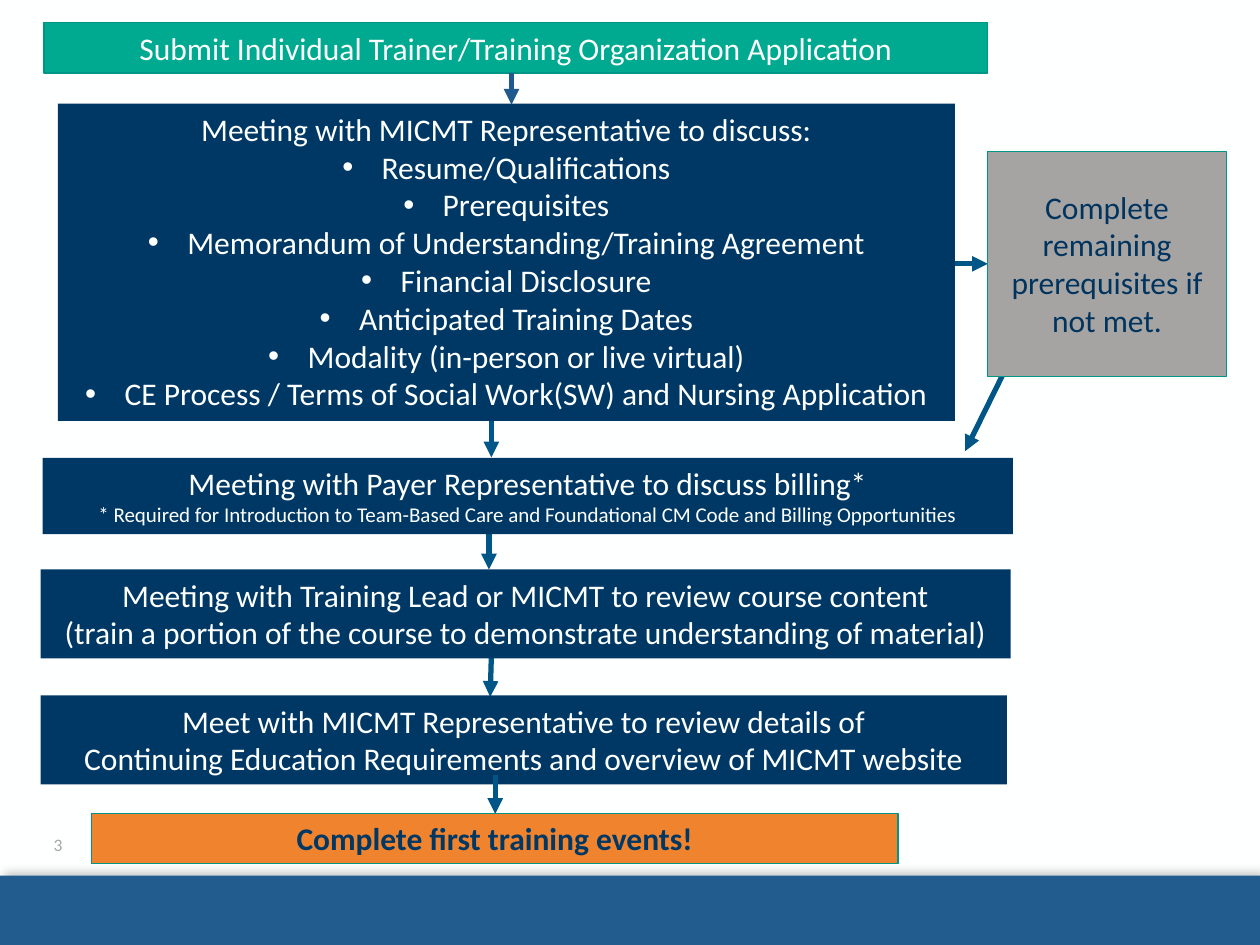
from lxml import etree
from pptx import Presentation
from pptx.dml.color import RGBColor
from pptx.enum.shapes import MSO_CONNECTOR, MSO_SHAPE
from pptx.enum.text import MSO_ANCHOR, PP_ALIGN
from pptx.oxml import parse_xml
from pptx.oxml.ns import nsdecls, qn
from pptx.util import Pt

RECT = MSO_SHAPE.RECTANGLE
STRAIGHT = MSO_CONNECTOR.STRAIGHT
TOP, MIDDLE = MSO_ANCHOR.TOP, MSO_ANCHOR.MIDDLE
CENTER = PP_ALIGN.CENTER
LEFT_SIDE = 1

THEME = {
    "font": "Calibri", "body": 18, "note": 12, "number": 10,
    "paper": "FEFFFF", "navy": "003865", "teal": "00AA90", "outline": "009687",
    "gray": "A6A4A3", "gray_text": "00345E", "orange": "F0842E",
    "footer": "225B8D", "number_text": "A7A7A7",
    "arrow": "005687", "first_arrow": "1F598D",
}

BOXES = {
    "apply": {"at": (25.2, 13, 539.3, 28.8), "fill": "teal", "outlined": True,
              "lines": ["Submit Individual Trainer/Training Organization Application"]},
    "discuss": {"at": (33.1, 59.2, 512.6, 181.3), "fill": "navy",
                "lines": ["Meeting with MICMT Representative to discuss:"],
                "bullets": ["Resume/Qualifications",
                            "Prerequisites",
                            "Memorandum of Understanding/Training Agreement",
                            "Financial Disclosure",
                            "Anticipated Training Dates",
                            "Modality (in-person or live virtual)",
                            "CE Process / Terms of Social Work(SW) and Nursing Application"]},
    "prerequisites": {"at": (564.5, 86.5, 136.3, 128.5), "fill": "gray", "outlined": True,
                      "color": "gray_text", "inset_top": 20.7,
                      "lines": ["Complete remaining prerequisites if not met."]},
    "billing": {"at": (24.4, 261.6, 554.4, 43.6), "fill": "navy",
                "lines": ["Meeting with Payer Representative to discuss billing*"],
                "notes": ["* Required for Introduction to Team-Based Care and "
                          "Foundational CM Code and Billing Opportunities"]},
    "content": {"at": (23.2, 325.4, 554.4, 50.9), "fill": "navy",
                "lines": ["Meeting with Training Lead or MICMT to review course content",
                          "(train a portion of the course to demonstrate understanding of material)"]},
    "complete": {"at": (52.2, 464.7, 461, 28.8), "fill": "orange", "outlined": True,
                 "color": "navy", "bold": True,
                 "lines": ["Complete first training events!"]},
    "details": {"at": (23.2, 397.4, 552.2, 50.9), "fill": "navy",
                "lines": ["Meet with MICMT Representative to review details of",
                          "Continuing Education Requirements and overview of MICMT website"]},
}

ARROWS_BEHIND = [
    (606.2, 146.9, 551.5, 257.8),
    (279.4, 272.9, 279.4, 325.4),
    (281.5, 350.6, 280.1, 398.2),
    (280.8, 209.5, 280.8, 261.4),
]
TO_PREREQUISITES = (511.2, 150.75, 564.5, 150.75)
ARROWS_FRONT = [
    ((283, 442.8, 283, 465.1), "arrow"),
    ((292.3, 41.8, 292.3, 59.8), "first_arrow"),
]


def rgb(name):
    return RGBColor.from_string(THEME[name])


def add_rect(slide, at, fill):
    sp = slide.shapes.add_shape(RECT, *map(Pt, at))
    sp.shadow.inherit = False
    sp.fill.solid()
    sp.fill.fore_color.rgb = rgb(fill)
    sp.line.fill.background()
    return sp


def add_arrow(slide, ends, color="arrow"):
    cx = slide.shapes.add_connector(STRAIGHT, *map(Pt, ends))
    cx.line.color.rgb = rgb(color)
    cx.line.width = Pt(3)
    etree.SubElement(cx.line._get_or_add_ln(), qn("a:tailEnd"), type="triangle")
    etree.SubElement(cx._element.spPr, qn("a:effectLst"))
    return cx


def set_bullet(p):
    pPr = p._p.get_or_add_pPr()
    pPr.set("marL", str(Pt(22.5)))
    pPr.set("indent", str(-Pt(22.5)))
    etree.SubElement(pPr, qn("a:buFont"), typeface="Arial")
    etree.SubElement(pPr, qn("a:buChar"), char="•")


def format_text(p, size, color, bold=False):
    p.alignment = CENTER
    for r in p.runs:
        r.font.name = THEME["font"]
        r.font.size = Pt(THEME[size])
        r.font.color.rgb = rgb(color)
        r.font.bold = bold


def add_box(slide, box):
    sp = add_rect(slide, box["at"], box["fill"])
    if box.get("outlined"):
        sp.line.color.rgb = rgb("outline")
        sp.line.width = Pt(0.75)
    tf = sp.text_frame
    tf.word_wrap = True
    tf.vertical_anchor = TOP
    tf.margin_left = tf.margin_right = Pt(7.2)
    tf.margin_top = Pt(box.get("inset_top", 3.6))
    tf.margin_bottom = Pt(3.6)
    rows = [(text, kind) for kind in ("lines", "bullets", "notes") for text in box.get(kind, [])]
    for i, (text, kind) in enumerate(rows):
        p = tf.add_paragraph() if i else tf.paragraphs[0]
        p.text = text
        if kind == "bullets":
            set_bullet(p)
        format_text(p, "note" if kind == "notes" else "body",
                    box.get("color", "paper"), box.get("bold", False))
    return sp


def add_footer(slide):
    bar = add_rect(slide, (0, 500.4, 720, 39.6), "footer")
    effects = bar._element.spPr.find(qn("a:effectLst"))
    effects.append(parse_xml(
        f'<a:outerShdw {nsdecls("a")} blurRad="{Pt(6)}" dist="{Pt(3)}" dir="18900000" '
        'rotWithShape="0"><a:srgbClr val="000000"><a:alpha val="24000"/></a:srgbClr></a:outerShdw>'))
    tf = slide.shapes.add_textbox(Pt(18), Pt(468), Pt(30.2), Pt(28.8)).text_frame
    tf.word_wrap = True
    tf.vertical_anchor = MIDDLE
    tf.margin_left = tf.margin_right = 0
    tf.text = "3"
    format_text(tf.paragraphs[0], "number", "number_text")


def main():
    prs = Presentation()
    prs.slide_width, prs.slide_height = Pt(720), Pt(540)
    slide = prs.slides.add_slide(prs.slide_layouts[6])
    slide.background.fill.solid()
    slide.background.fill.fore_color.rgb = rgb("paper")
    add_footer(slide)
    side_arrow = add_arrow(slide, TO_PREREQUISITES)
    for ends in ARROWS_BEHIND:
        add_arrow(slide, ends)
    shapes = {name: add_box(slide, box) for name, box in BOXES.items()}
    side_arrow.end_connect(shapes["prerequisites"], LEFT_SIDE)
    for ends, color in ARROWS_FRONT:
        add_arrow(slide, ends, color)
    prs.save("out.pptx")


if __name__ == "__main__":
    main()
